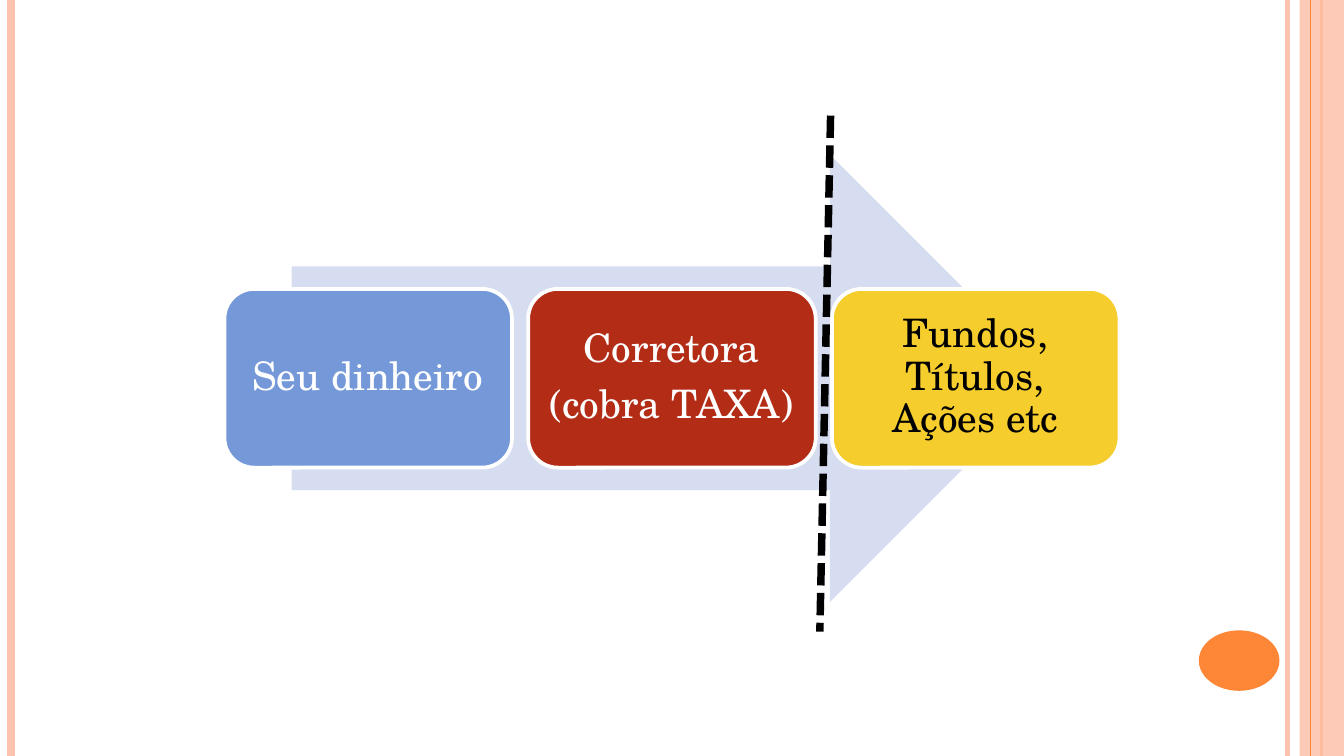
"""Builds a slide showing how money flows through a broker into investments."""
from lxml import etree
from pptx import Presentation
from pptx.dml.color import RGBColor
from pptx.enum.dml import MSO_LINE
from pptx.enum.shapes import MSO_CONNECTOR, MSO_SHAPE
from pptx.enum.text import MSO_ANCHOR, PP_ALIGN
from pptx.oxml.ns import qn
from pptx.util import Inches, Pt

STRAIGHT = MSO_CONNECTOR.STRAIGHT
RECTANGLE = MSO_SHAPE.RECTANGLE
ELLIPSE = MSO_SHAPE.OVAL
ARROW = MSO_SHAPE.RIGHT_ARROW
ROUNDED = MSO_SHAPE.ROUNDED_RECTANGLE
DASH = MSO_LINE.SQUARE_DOT
MIDDLE = MSO_ANCHOR.MIDDLE
CENTER = PP_ALIGN.CENTER

WHITE = RGBColor(0xFF, 0xFF, 0xFF)
BLACK = RGBColor(0x00, 0x00, 0x00)
PEACH = RGBColor(0xFE, 0xC3, 0xAE)
ORANGE = RGBColor(0xFE, 0x86, 0x37)
PALE_BLUE = RGBColor(0xD6, 0xDD, 0xF1)
BLUE = RGBColor(0x75, 0x98, 0xD9)
RED = RGBColor(0xB3, 0x2C, 0x16)
YELLOW = RGBColor(0xF5, 0xCD, 0x2D)

WIDTH = 10
HEIGHT = WIDTH * 9 / 16

deck = Presentation()
deck.slide_width = Inches(WIDTH)
deck.slide_height = Inches(HEIGHT)
page = deck.slides.add_slide(deck.slide_layouts[6])


def add_line(start, end, color, width):
    line = page.shapes.add_connector(STRAIGHT, *map(Inches, start + end))
    line.line.color.rgb = color
    line.line.width = Pt(width)
    etree.SubElement(line._element.spPr, qn("a:effectLst"))
    return line


def add_box(kind, place, color):
    box = page.shapes.add_shape(kind, *map(Inches, place))
    box.shadow.inherit = False
    box.fill.solid()
    box.fill.fore_color.rgb = color
    box.line.fill.background()
    return box


for x, color, width in [(9.58, PEACH, 3), (0.08, PEACH, 4.5), (9.83, ORANGE, 1.5)]:
    add_line((x, 0), (x, HEIGHT), color, width)
band = add_box(RECTANGLE, (9.67, 0, 0.33, HEIGHT), PEACH)
band_color = band._element.spPr.find(qn("a:solidFill")).find(qn("a:srgbClr"))
etree.SubElement(band_color, qn("a:alpha"), val="87000")
add_line((9.75, 0), (9.75, HEIGHT), ORANGE, 0.75)
add_box(ELLIPSE, (8.92, 4.69, 0.6, 0.45), ORANGE)
add_box(ARROW, (2.17, 1.15, 5.67, 3.33), PALE_BLUE)

steps = [
    (["Seu dinheiro"], BLUE, WHITE),
    (["Corretora", "(cobra TAXA)"], RED, WHITE),
    (["Fundos, Títulos, Ações etc"], YELLOW, BLACK),
]
frame_format = {
    "word_wrap": True,
    "vertical_anchor": MIDDLE,
    "margin_left": Inches(0.09),
    "margin_right": Inches(0.09),
    "margin_top": Inches(0.09),
    "margin_bottom": Inches(0.09),
}
para_format = {"alignment": CENTER, "line_spacing": 0.9, "space_after": Pt(7.35)}
font_format = {"name": "TeX Gyre Schola", "size": Pt(21)}

for index, (lines, fill, ink) in enumerate(steps):
    left = 1.67 + 2.26 * index
    box = add_box(ROUNDED, (left, 2.15, 2.14, 1.33), fill)
    box.line.color.rgb = WHITE
    box.line.width = Pt(2)
    label = page.shapes.add_textbox(*map(Inches, (left + 0.06, 2.21, 2.01, 1.2)))
    frame = label.text_frame
    for name, value in frame_format.items():
        setattr(frame, name, value)
    for number, text in enumerate(lines):
        para = frame.add_paragraph() if number else frame.paragraphs[0]
        for name, value in para_format.items():
            setattr(para, name, value)
        span = para.add_run()
        span.text = text
        span.font.color.rgb = ink
        for name, value in font_format.items():
            setattr(span.font, name, value)

divider = add_line((6.18, 0.86), (6.1, 4.7), BLACK, 4)
divider.line.dash_style = DASH

deck.save("out.pptx")
